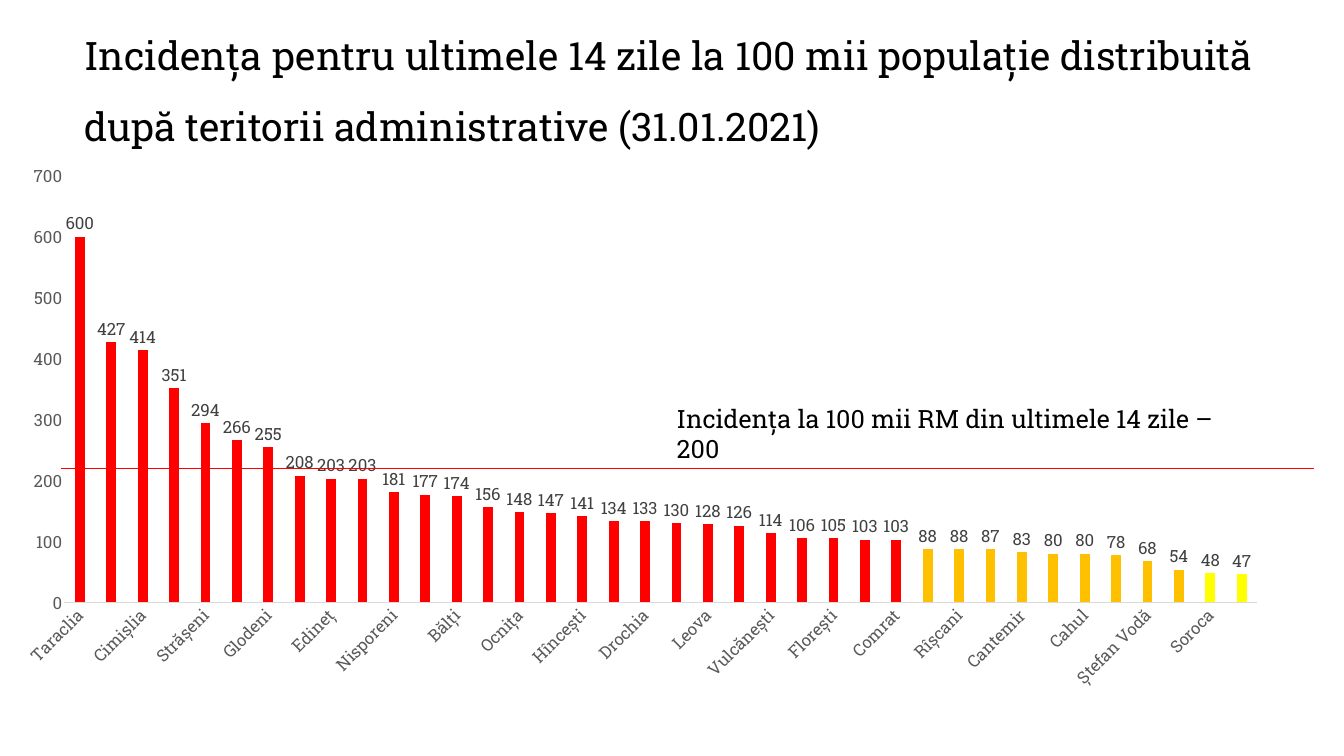
from lxml import etree
from pptx import Presentation
from pptx.chart.data import CategoryChartData
from pptx.dml.color import RGBColor
from pptx.enum.chart import XL_CHART_TYPE, XL_LABEL_POSITION, XL_TICK_MARK
from pptx.enum.shapes import MSO_CONNECTOR
from pptx.enum.text import MSO_ANCHOR, MSO_AUTO_SIZE, PP_ALIGN
from pptx.oxml.ns import qn
from pptx.util import Cm, Pt

FONT = "Roboto Slab"
RED, ORANGE, YELLOW = "FF0000", "FFC000", "FFFF00"
TITLE_LINES = [
    "Incidența pentru ultimele 14 zile la 100 mii populație distribuită",
    "după teritorii administrative (31.01.2021)",
]
AVERAGE_LABEL = "Incidența la 100 mii RM din ultimele 14 zile – 200"
INCIDENCE = {
    "Taraclia": 600, "Chișinău": 427, "Cimișlia": 414, "Ialoveni": 351,
    "Strășeni": 294, "Anenii Noi": 266, "Glodeni": 255, "Călărași": 208,
    "Edineț": 203, "Briceni": 203, "Nisporeni": 181, "Șoldănești": 177,
    "Bălți": 174, "Orhei": 156, "Ocnița": 148, "Criuleni": 147,
    "Hîncești": 141, "Sîngerei": 134, "Drochia": 133, "Dubăsari": 130,
    "Leova": 128, "Telenești": 126, "Vulcănești": 114, "Fălești": 106,
    "Florești": 105, "Dondușeni": 103, "Comrat": 103, "Transnistria": 88,
    "Rîșcani": 88, "Basarabeasca": 87, "Cantemir": 83, "Rezina": 80,
    "Cahul": 80, "Ungheni": 78, "Ștefan Vodă": 68, "Căușeni": 54,
    "Soroca": 48, "Ceadîr-Lunga": 47,
}


def color(hex_string):
    return RGBColor.from_string(hex_string)


def style_font(font, size, hex_string):
    font.name = FONT
    font.size = Pt(size)
    font.bold = False
    font.color.rgb = color(hex_string)


def bar_color(value):
    if value >= 100:
        return RED
    return ORANGE if value >= 50 else YELLOW


def set_plot_layout(chart, **fractions):
    plot_area = chart._chartSpace.chart.plotArea
    for old_layout in plot_area.findall(qn("c:layout")):
        plot_area.remove(old_layout)
    layout = etree.Element(qn("c:layout"))
    manual = etree.SubElement(layout, qn("c:manualLayout"))
    settings = {"layoutTarget": "inner", "xMode": "edge", "yMode": "edge", **fractions}
    for name, value in settings.items():
        etree.SubElement(manual, qn(f"c:{name}")).set("val", str(value))
    plot_area.insert(0, layout)


def style_axis(axis):
    axis.has_major_gridlines = False
    axis.major_tick_mark = axis.minor_tick_mark = XL_TICK_MARK.NONE
    style_font(axis.tick_labels.font, 24, "595959")


def add_title(slide, left, top, width, height):
    title = slide.shapes.title
    title.left, title.top, title.width, title.height = map(Cm, (left, top, width, height))
    text_frame = title.text_frame
    text_frame.text = "\n".join(TITLE_LINES)
    text_frame.word_wrap = True
    text_frame.auto_size = MSO_AUTO_SIZE.NONE
    text_frame.vertical_anchor = MSO_ANCHOR.TOP
    for paragraph in text_frame.paragraphs:
        paragraph.alignment = PP_ALIGN.LEFT
        paragraph.line_spacing = 1.2
        paragraph.space_before = Pt(20)
        style_font(paragraph.runs[0].font, 56, "000000")


def add_incidence_chart(slide, left, top, width, height):
    data = CategoryChartData(number_format="0")
    data.categories = list(INCIDENCE)
    data.add_series("Series 1", list(INCIDENCE.values()))
    chart = slide.shapes.add_chart(
        XL_CHART_TYPE.COLUMN_CLUSTERED, Cm(left), Cm(top), Cm(width), Cm(height), data
    ).chart
    chart.has_legend = chart.has_title = False
    style_font(chart.font, 24, "000000")
    set_plot_layout(chart, x=0.05, y=0.04, w=0.93, h=0.78)

    category_axis, value_axis = chart.category_axis, chart.value_axis
    style_axis(category_axis)
    category_axis.format.line.color.rgb = color("D9D9D9")
    category_axis.format.line.width = Pt(0.75)
    category_axis._element.find(qn("c:txPr")).find(qn("a:bodyPr")).set("rot", "-2700000")
    style_axis(value_axis)
    value_axis.format.line.fill.background()
    value_axis.minimum_scale, value_axis.maximum_scale = 0, 700
    value_axis.major_unit = 100

    plot = chart.plots[0]
    plot.gap_width, plot.overlap = 219, -27
    plot.vary_by_categories = False
    series = plot.series[0]
    series.format.fill.solid()
    series.format.fill.fore_color.rgb = color(RED)
    for index, value in enumerate(INCIDENCE.values()):
        if bar_color(value) != RED:
            fill = series.points[index].format.fill
            fill.solid()
            fill.fore_color.rgb = color(bar_color(value))
    labels = series.data_labels
    labels.show_value = True
    labels.position = XL_LABEL_POSITION.OUTSIDE_END
    labels.number_format, labels.number_format_is_linked = "0", False
    style_font(labels.font, 24, "404040")


def add_average_marker(slide, left, top, width, height):
    line_top = top + height
    line = slide.shapes.add_connector(
        MSO_CONNECTOR.STRAIGHT, Cm(left), Cm(line_top), Cm(left + width), Cm(line_top)
    )
    line.line.color.rgb = color(RED)
    line.line.width = Pt(2)
    etree.SubElement(line._element.spPr, qn("a:effectLst"))

    label = slide.shapes.add_textbox(Cm(left + 30.79), Cm(top), Cm(29.06), Cm(1.8))
    text_frame = label.text_frame
    text_frame.text = AVERAGE_LABEL
    text_frame.word_wrap = True
    style_font(text_frame.paragraphs[0].runs[0].font, 36, "000000")


def main():
    presentation = Presentation()
    presentation.slide_width, presentation.slide_height = Cm(67.74), Cm(38.1)
    slide = presentation.slides.add_slide(presentation.slide_layouts[5])
    add_title(slide, 3.99, 0.99, 61.37, 4.5)
    add_incidence_chart(slide, 0, 7.75, 64.67, 27.58)
    add_average_marker(slide, 3.07, 20.19, 63.14, 3.41)
    presentation.save("out.pptx")


if __name__ == "__main__":
    main()
